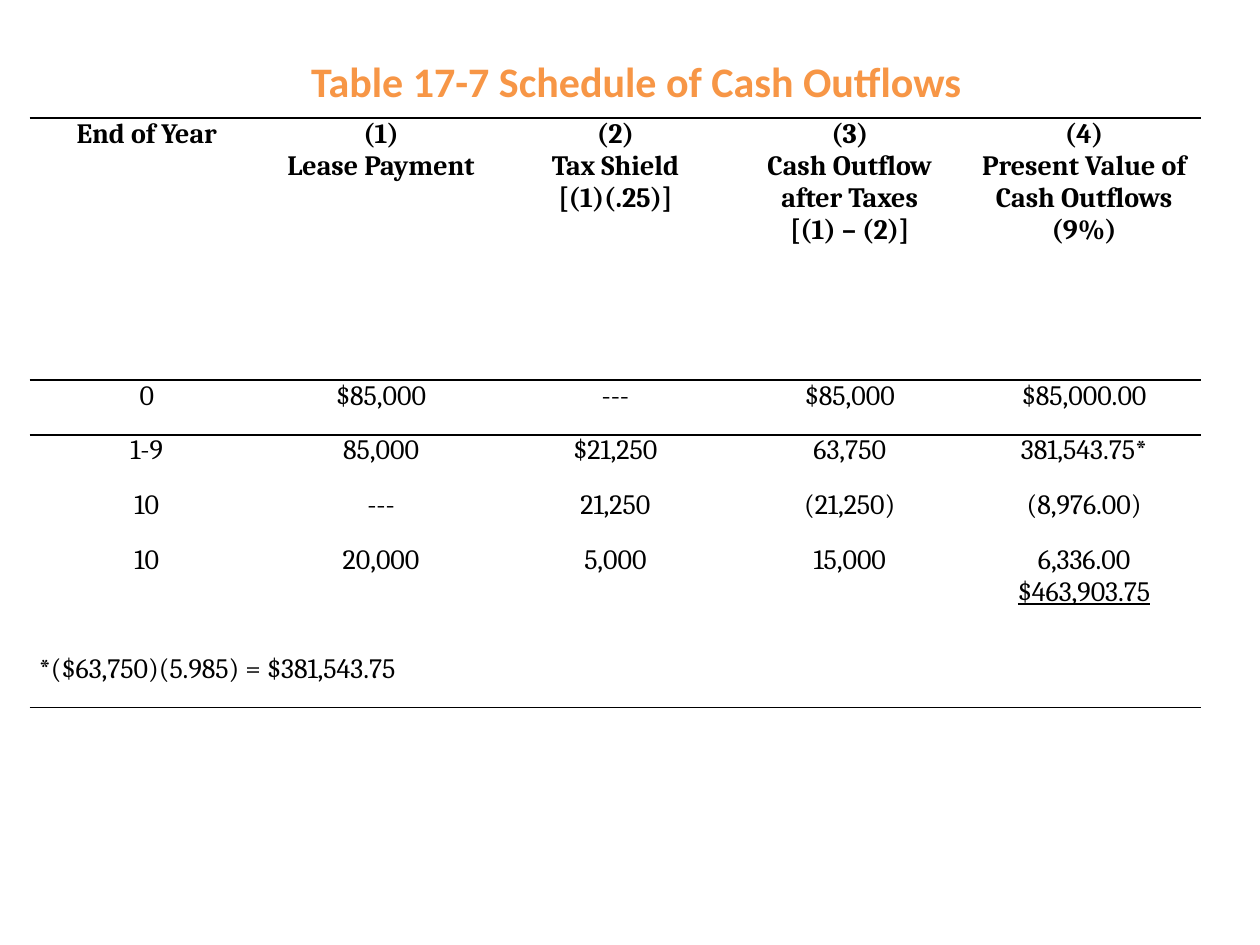
"""Build the slide with the schedule of lease cash outflows."""
from lxml import etree
from pptx import Presentation
from pptx.dml.color import RGBColor
from pptx.enum.text import MSO_ANCHOR, MSO_AUTO_SIZE, PP_ALIGN
from pptx.oxml.ns import qn
from pptx.util import Pt

CENTER, LEFT = PP_ALIGN.CENTER, PP_ALIGN.LEFT
TOP = MSO_ANCHOR.TOP
FIT_SHAPE = MSO_AUTO_SIZE.SHAPE_TO_FIT_TEXT
PLAIN_TABLE_STYLE = "{2D5ABB26-0587-4C30-8999-92F81FD0307C}"
BLACK, ORANGE = "000000", "F79646"

TITLE = "Table 17-7 Schedule of Cash Outflows"
HEADINGS = [
    "End of Year",
    "(1)\nLease Payment",
    "(2)\nTax Shield\n[(1)(.25)]",
    "(3)\nCash Outflow after Taxes\n[(1) – (2)]",
    "(4)\nPresent Value of Cash Outflows (9%)",
]
OUTFLOWS = [
    ["0", "$85,000", "---", "$85,000", "$85,000.00"],
    ["1-9", "85,000", "$21,250", "63,750", "381,543.75*"],
    ["10", "---", "21,250", "(21,250)", "(8,976.00)"],
    ["10", "20,000", "5,000", "15,000", "6,336.00\n$463,903.75"],
]
FOOTNOTE = "*($63,750)(5.985) = $381,543.75"
ROW_HEIGHTS = [149.8, 31.2, 31.2, 31.2, 62.4, 31.2]
COLUMN_WIDTH = 133.92
RULES = {0: ["lnT", "lnB"], 1: ["lnT"], 5: ["lnB"]}


def style_text(frame, size, font, color, bold=False, align=CENTER):
    for paragraph in frame.paragraphs:
        paragraph.alignment = align
        for run in paragraph.runs:
            run.font.size = Pt(size)
            run.font.name = font
            run.font.bold = bold
            run.font.color.rgb = RGBColor.from_string(color)


def add_rules(cell, edges):
    properties = cell._tc.get_or_add_tcPr()
    for position, edge in enumerate(edges):
        line = etree.Element(qn(f"a:{edge}"), w=str(Pt(1)))
        fill = etree.SubElement(line, qn("a:solidFill"))
        etree.SubElement(fill, qn("a:srgbClr"), val=BLACK)
        properties.insert(position, line)


def add_title(slide):
    title = slide.shapes.add_textbox(Pt(168.5), Pt(28.1), Pt(390.2), Pt(36))
    frame = title.text_frame
    frame.text = TITLE
    frame.word_wrap = False
    frame.auto_size = FIT_SHAPE
    style_text(frame, 24, "Calibri", ORANGE, bold=True)


def add_schedule(slide):
    rows = [HEADINGS, *OUTFLOWS, [FOOTNOTE] + [""] * (len(HEADINGS) - 1)]
    last = len(rows) - 1
    schedule = slide.shapes.add_table(
        len(rows), len(HEADINGS), Pt(16.9), Pt(67.5),
        Pt(COLUMN_WIDTH * len(HEADINGS)), Pt(sum(ROW_HEIGHTS))).table
    schedule._tbl.tblPr.find(qn("a:tableStyleId")).text = PLAIN_TABLE_STYLE
    schedule.first_row = schedule.horz_banding = False
    for column in schedule.columns:
        column.width = Pt(COLUMN_WIDTH)
    for row, height in zip(schedule.rows, ROW_HEIGHTS):
        row.height = Pt(height)
    schedule.cell(last, 0).merge(schedule.cell(last, len(HEADINGS) - 1))

    for r, texts in enumerate(rows):
        for c, text in enumerate(texts):
            cell = schedule.cell(r, c)
            cell.text_frame.text = text
            cell.margin_left = cell.margin_right = Pt(5.4)
            cell.margin_top = cell.margin_bottom = Pt(0)
            cell.vertical_anchor = TOP
            cell.fill.background()
            style_text(cell.text_frame, 16, "Cambria", BLACK,
                       bold=r == 0, align=LEFT if r == last else CENTER)
            add_rules(cell, RULES.get(r, []))
    total = schedule.cell(last - 1, len(HEADINGS) - 1).text_frame.paragraphs[-1]
    total.runs[0].font.underline = True


def main():
    deck = Presentation()
    deck.slide_width, deck.slide_height = Pt(720), Pt(540)
    slide = deck.slides.add_slide(deck.slide_layouts[6])
    add_title(slide)
    add_schedule(slide)
    deck.save("out.pptx")


if __name__ == "__main__":
    main()
